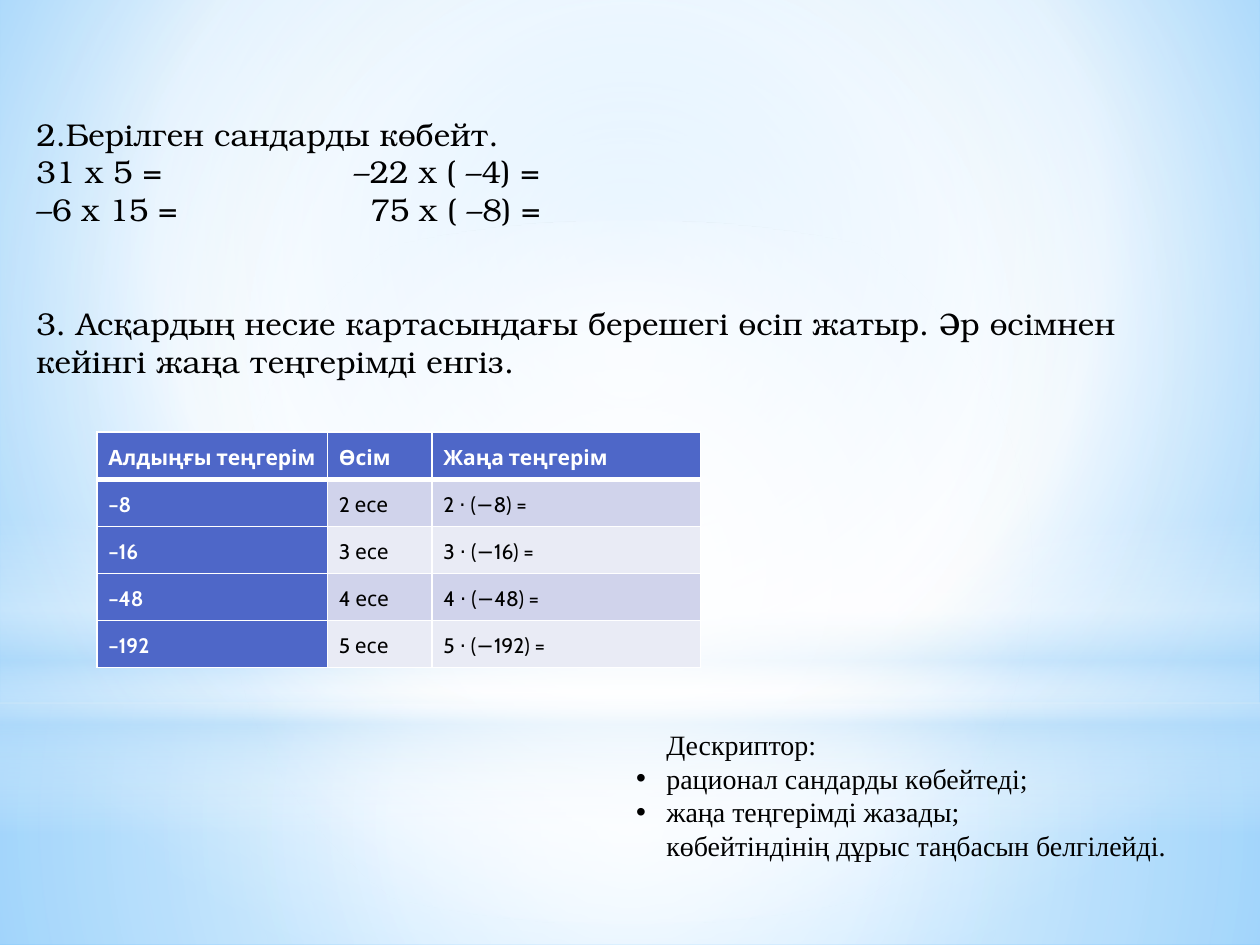
import pptx
import pptx.dml.color
import pptx.enum.shapes
import pptx.enum.text
import pptx.oxml
import pptx.oxml.ns
import pptx.util

WHITE, BLACK, PALE_BLUE, HEADER_BLUE = "FFFFFF", "000000", "B4DCFA", "4E67C8"
BANDS = ("D0D3EB", "E9EBF5")
CENTRE = (50, 50, 50, 50)


def color(value):
    return pptx.dml.color.RGBColor.from_string(value)


def element(markup):
    head, rest = markup.split(">", 1)
    closing = "/" if head.endswith("/") else ""
    head = head.rstrip("/")
    return pptx.oxml.parse_xml(f"{head} {pptx.oxml.ns.nsdecls('a')}{closing}>{rest}")


def gradient(stops, focus=None):
    marks = "".join(
        f'<a:gs pos="{position * 1000}"><a:srgbClr val="{value}">'
        f'<a:alpha val="{opacity * 1000}"/></a:srgbClr></a:gs>'
        for position, value, opacity in stops
    )
    if focus:
        left, top, right, bottom = (share * 1000 for share in focus)
        direction = (
            f'<a:path path="circle"><a:fillToRect l="{left}" t="{top}" '
            f'r="{right}" b="{bottom}"/></a:path>'
        )
    else:
        direction = '<a:lin ang="5400000" scaled="0"/>'
    return element(f'<a:gradFill rotWithShape="1"><a:gsLst>{marks}</a:gsLst>{direction}</a:gradFill>')


class Lesson:
    columns, rows = 100, 75
    serif, sans, plain = "TeX Gyre Bonum", "Cabin", "Times New Roman"

    def __init__(self):
        self.presentation = pptx.Presentation()
        self.presentation.slide_width = pptx.util.Inches(10)
        self.presentation.slide_height = pptx.util.Inches(7.5)
        self.slide = self.presentation.slides.add_slide(self.presentation.slide_layouts[6])

    def across(self, count):
        return round(self.presentation.slide_width * count / self.columns)

    def down(self, count):
        return round(self.presentation.slide_height * count / self.rows)

    def place(self, left, top, width, height):
        return self.across(left), self.down(top), self.across(width), self.down(height)

    def swap_fill(self, owner, fill):
        solid = owner.find(pptx.oxml.ns.qn("a:solidFill"))
        owner.replace(solid, fill)

    def background(self, stops, focus):
        self.slide.background.fill.solid()
        self.slide.background.fill.fore_color.rgb = color(WHITE)
        properties = self.slide.element.find(".//" + pptx.oxml.ns.qn("p:bgPr"))
        self.swap_fill(properties, gradient(stops, focus))

    def glow(self, kind, area, stops, focus=None):
        shape = self.slide.shapes.add_shape(kind, *self.place(*area))
        shape.shadow.inherit = False
        shape.line.fill.background()
        shape.fill.solid()
        shape.fill.fore_color.rgb = color(WHITE)
        self.swap_fill(shape.element.spPr, gradient(stops, focus))

    def run(self, paragraph, text, font, size, value=BLACK, bold=False):
        run = paragraph.add_run()
        run.text = text
        run.font.name, run.font.size, run.font.bold = font, pptx.util.Pt(size), bold
        run.font.color.rgb = color(value)

    def text(self, area, lines):
        frame = self.slide.shapes.add_textbox(*self.place(*area)).text_frame
        frame.word_wrap = True
        frame.vertical_anchor = pptx.enum.text.MSO_ANCHOR.TOP
        for index, (text, style) in enumerate(lines):
            paragraph = frame.paragraphs[0] if index == 0 else frame.add_paragraph()
            paragraph.space_before = pptx.util.Pt(style.get("gap", 0))
            self.run(paragraph, text, style.get("font", self.serif), style.get("size", 18))
            properties = paragraph._p.get_or_add_pPr()
            if "indent" in style:
                properties.set("marL", str(self.across(style["indent"])))
            if "bullet" in style:
                properties.set("indent", str(-self.across(style["bullet"])))
                properties.append(element('<a:buFont typeface="Arial"/>'))
                properties.append(element('<a:buChar char="•"/>'))
            if "tab" in style:
                position = self.across(style["tab"])
                properties.append(element(f'<a:tabLst><a:tab pos="{position}" algn="l"/></a:tabLst>'))

    def border(self, cell, heavy_side=None):
        properties = cell._tc.get_or_add_tcPr()
        for index, side in enumerate("LRTB"):
            width = pptx.util.Pt(3 if side == heavy_side else 1)
            properties.insert(index, element(
                f'<a:ln{side} w="{width}"><a:solidFill><a:srgbClr val="{WHITE}"/>'
                f"</a:solidFill></a:ln{side}>"
            ))

    def table(self, area, widths, records):
        shape = self.slide.shapes.add_table(len(records), len(widths), *self.place(*area))
        table = shape.table
        for column, width in zip(table.columns, widths):
            column.width = self.across(width)
        for row_index, record in enumerate(records):
            for column_index, text in enumerate(record):
                cell = table.cell(row_index, column_index)
                heading = row_index == 0 or column_index == 0
                cell.fill.solid()
                cell.fill.fore_color.rgb = color(HEADER_BLUE if heading else BANDS[(row_index - 1) % 2])
                cell.vertical_anchor = pptx.enum.text.MSO_ANCHOR.MIDDLE
                cell.margin_left = cell.margin_right = self.across(0.7)
                cell.margin_top = cell.margin_bottom = self.down(0.7)
                paragraph = cell.text_frame.paragraphs[0]
                paragraph.line_spacing = 1.15
                paragraph._p.get_or_add_pPr().set("marL", str(self.across(0.2)))
                self.run(paragraph, text, self.sans, 12, WHITE if heading else BLACK, heading)
                self.border(cell, {0: "B", 1: "T"}.get(row_index))


def main():
    lesson = Lesson()
    shapes = pptx.enum.shapes.MSO_SHAPE
    lesson.background(
        [(0, "9ED5FF", 100), (60, WHITE, 100), (100, "5BB9FF", 100)], (20, 10, 20, 60)
    )
    lesson.glow(shapes.RECTANGLE, (0, 55.8, 100, 19.2),
                [(0, WHITE, 91), (37, WHITE, 76), (100, PALE_BLUE, 79)], CENTRE)
    lesson.glow(shapes.RECTANGLE, (0, 0, 100, 55.8),
                [(0, WHITE, 89), (48, WHITE, 62), (100, PALE_BLUE, 79)], CENTRE)
    lesson.glow(shapes.RECTANGLE, (0, 41.2, 100, 25),
                [(0, WHITE, 0), (29, WHITE, 30), (45, PALE_BLUE, 40),
                 (55, WHITE, 26), (65, PALE_BLUE, 60), (100, WHITE, 0)])
    lesson.glow(shapes.OVAL, (0, 17.5, 100, 55.8), [(0, WHITE, 100), (56, WHITE, 0)], CENTRE)

    balances = [(8, 2), (16, 3), (48, 4), (192, 5)]
    records = [("Алдыңғы теңгерім", "Өсім", "Жаңа теңгерім")]
    records += [(f"–{debt}", f"{times} есе", f"{times} ⋅ (−{debt}) =") for debt, times in balances]
    lesson.table((7.7, 34.3, 47.9, 18.2), (18.3, 8.3, 21.3), records)

    note = {"font": lesson.plain, "size": 16, "indent": 50}
    bulleted = {**note, "bullet": 2.4}
    lesson.text((1.9, 8.6, 96.1, 60.5), [
        ("2.Берілген сандарды көбейт.", {}),
        ("31 х 5 =\t–22 х ( –4) =", {"tab": 25.2}),
        ("–6 х 15 =\t75 х ( –8) =", {"tab": 26.5}),
        ("3. Асқардың несие картасындағы берешегі өсіп жатыр. "
         "Әр өсімнен кейінгі жаңа теңгерімді енгіз.", {"gap": 43.4}),
        ("Дескриптор:", {**note, "gap": 199}),
        ("рационал сандарды көбейтеді;", bulleted),
        ("жаңа теңгерімді жазады;", bulleted),
        ("көбейтіндінің дұрыс таңбасын белгілейді.", note),
    ])
    lesson.presentation.save("out.pptx")


if __name__ == "__main__":
    main()
